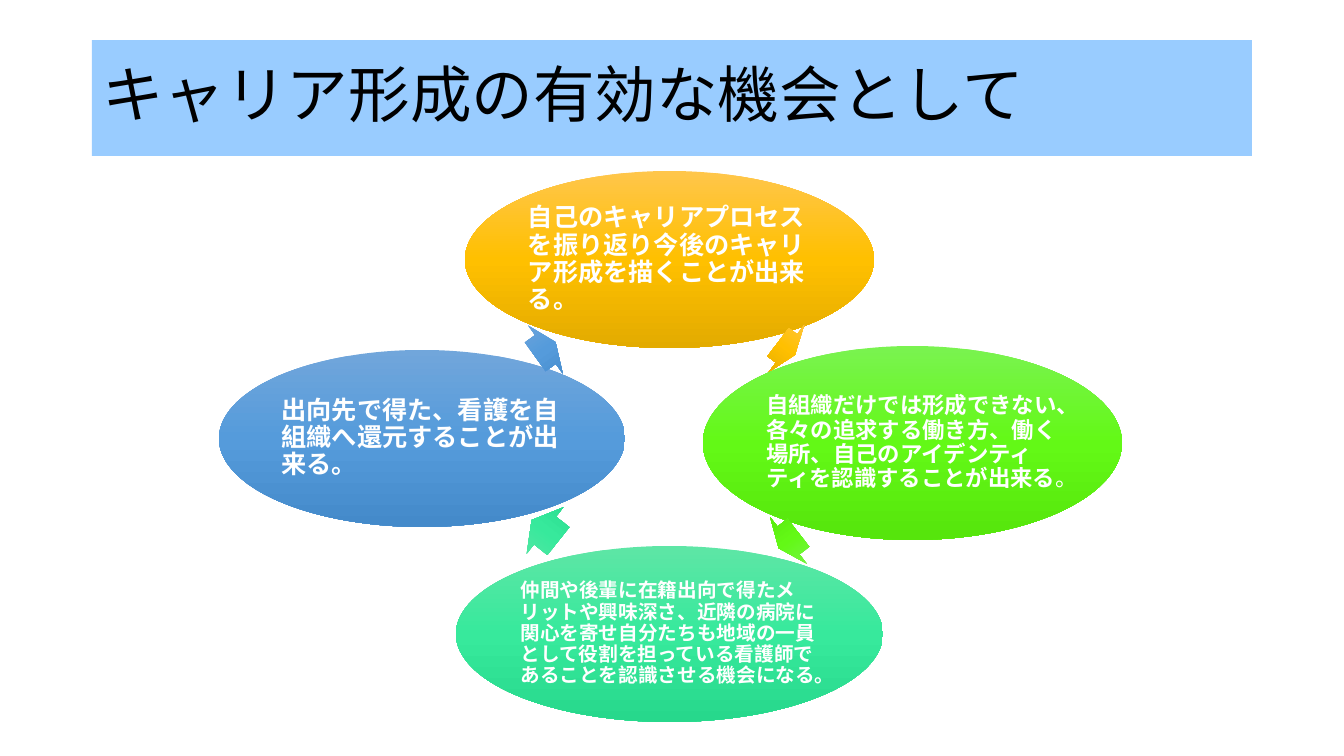
import copy

import pptx
import pptx.dml.color
import pptx.enum.shapes
import pptx.enum.text
import pptx.oxml.ns
import pptx.util
from lxml import etree

RGB = pptx.dml.color.RGBColor
SHAPE = pptx.enum.shapes.MSO_SHAPE
ALIGN = pptx.enum.text.PP_ALIGN
ANCHOR = pptx.enum.text.MSO_ANCHOR
qn = pptx.oxml.ns.qn

BLACK = RGB(0x00, 0x00, 0x00)
WHITE = RGB(0xFF, 0xFF, 0xFF)
SKY = RGB(0x99, 0xCC, 0xFF)
# Gradients from top to bottom
GOLD = RGB(0xFF, 0xC6, 0x4B), RGB(0xFF, 0xC0, 0x00), RGB(0xE3, 0xAB, 0x00)
LIME = RGB(0x7A, 0xF3, 0x50), RGB(0x63, 0xF9, 0x16), RGB(0x56, 0xE5, 0x0C)
MINT = RGB(0x5E, 0xE6, 0xA6), RGB(0x37, 0xE9, 0x9C), RGB(0x27, 0xD8, 0x8C)
BLUE = RGB(0x71, 0xA6, 0xDB), RGB(0x55, 0x9B, 0xDB), RGB(0x44, 0x8A, 0xCA)


def px(n):
    return pptx.util.Emu(round(n * 914400 / 100.8))


class Deck:
    font = "Noto Sans CJK JP"
    spacing = 0.9

    def __init__(self, width, height):
        self.prs = pptx.Presentation()
        self.prs.slide_width, self.prs.slide_height = px(width), px(height)
        self.s = self.prs.slides.add_slide(self.prs.slide_layouts[5])

    def set_text(self, sp, runs, size, color, inset=None):
        """Fill a shape with one paragraph of (text, bold) runs."""
        tf = sp.text_frame
        frame = {"word_wrap": True, "vertical_anchor": ANCHOR.MIDDLE,
                 "auto_size": pptx.enum.text.MSO_AUTO_SIZE.NONE}
        if inset is not None:
            for side in ("left", "top", "right", "bottom"):
                frame[f"margin_{side}"] = px(inset)
        for name, value in frame.items():
            setattr(tf, name, value)
        p = tf.paragraphs[0]
        p.alignment, p.line_spacing = ALIGN.LEFT, self.spacing
        for text, bold in runs:
            r = p.add_run()
            r.text = text
            style = {"size": pptx.util.Pt(size), "bold": bold, "name": self.font}
            for name, value in style.items():
                setattr(r.font, name, value)
            r.font.color.rgb = color
            ea = etree.SubElement(r._r.get_or_add_rPr(), qn("a:ea"))
            ea.set("typeface", self.font)

    def title(self, box, text, size):
        sp = self.s.shapes.title
        sp.left, sp.top, sp.width, sp.height = map(px, box)
        sp.fill.solid()
        sp.fill.fore_color.rgb = SKY
        self.set_text(sp, [(text, False)], size, BLACK)

    def shape(self, kind, box, colors):
        """Add a borderless shape with a vertical three-colour gradient."""
        sp = self.s.shapes.add_shape(kind, *map(px, box))
        sp.shadow.inherit = False
        sp.line.fill.background()
        sp.fill.gradient()
        sp.fill.gradient_angle = 270
        stops = sp._element.spPr.find(".//" + qn("a:gsLst"))
        stops.insert(1, copy.deepcopy(stops[0]))
        for i, (stop, color) in enumerate(zip(sp.fill.gradient_stops, colors)):
            stop.position, stop.color.rgb = i / 2, color
        return sp

    def ellipse(self, box, colors, runs, size, inset):
        sp = self.shape(SHAPE.OVAL, box, colors)
        self.set_text(sp, runs, size, WHITE, inset)

    def arrow(self, box, colors, angle):
        sp = self.shape(SHAPE.RIGHT_ARROW, box, colors)
        sp.adjustments[0], sp.adjustments[1] = 0.6, 0.5
        sp.rotation = angle


def main():
    deck = Deck(1344, 756)
    deck.title((92, 40, 1160, 116), "キャリア形成の有効な機会として", 44)

    # Cycle: each stage is an ellipse followed by its arrow
    stages = [
        (GOLD, (465, 171, 409, 177), 18, 3,
         [("自己のキャリアプロセスを振り返り今後のキャリア形成を描くことが出来る。", True)],
         (776, 319, 21, 59), 37),
        (LIME, (703, 346, 419, 194), 16, 2,
         [("自組織だけでは形成できない、各々の追求する働き方、働く場所、"
           "自己のアイデンティティを認識することが出来る", True), ("。", False)],
         (776, 511, 25, 59), 141.8),
        (MINT, (456, 546, 427, 176), 14, 2,
         [("仲間や後輩に在籍出向で得たメリットや興味深さ、近隣の病院に関心を寄せ"
           "自分たちも地域の一員として役割を担っている看護師であることを"
           "認識させる機会になる。", True)],
         (528, 501, 34, 59), 218.3),
        (BLUE, (219, 350, 406, 177), 18, 3,
         [("出向先で得た、看護を自組織へ還元することが出来る。", True)],
         (533, 320, 25, 59), 324.2),
    ]
    for colors, box, size, inset, runs, arrow_box, angle in stages:
        deck.ellipse(box, colors, runs, size, inset)
        deck.arrow(arrow_box, colors, angle)

    deck.prs.save("out.pptx")


if __name__ == "__main__":
    main()
